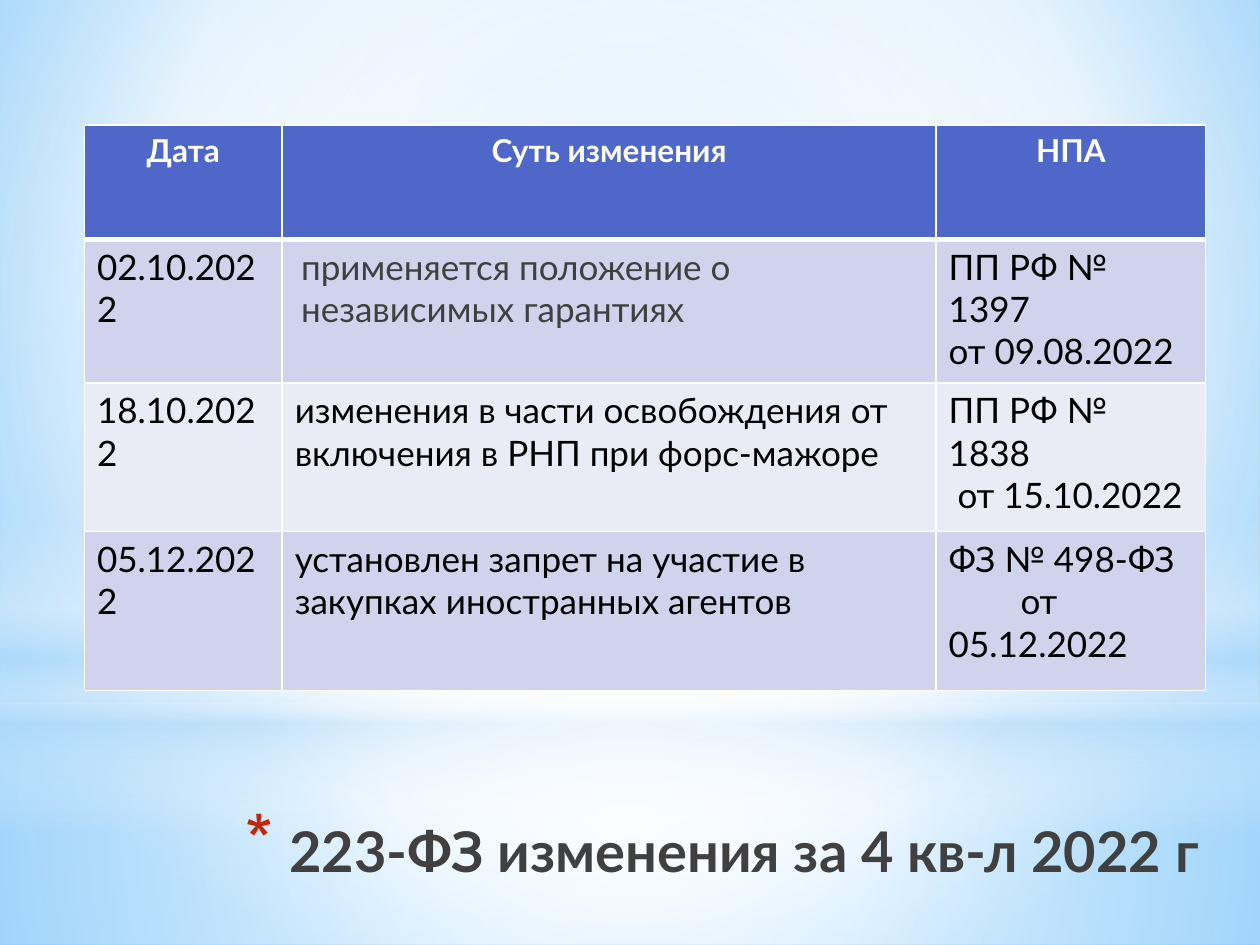
from lxml.etree import SubElement
from pptx import Presentation
from pptx.dml.color import RGBColor
from pptx.enum.shapes import MSO_SHAPE as Shape
from pptx.enum.text import MSO_ANCHOR as Anchor, PP_ALIGN as Align
from pptx.oxml import parse_xml
from pptx.oxml.ns import nsdecls, qn
from pptx.util import Inches, Pt

FONT = "Lato"
WIDTH, HEIGHT = 10, 7.5
TITLE = "223-ФЗ изменения за 4 кв-л 2022 г"
WHITE, BLACK, GREY, PALE = "FFFFFF", "000000", "404040", "B4DCFA"
HEADER_FILL, BAND_FILLS = "4E67C8", ("D0D3EB", "E9EBF5")

HEADERS = ("Дата", "Суть изменения", "НПА")
# Each cell is a list of paragraphs: text, left margin, first-line indent, colour
ROWS = (
    ([("02.10.2022", 0, 0, BLACK)],
     [("применяется положение о независимых гарантиях", 0.05, 0, GREY)],
     [("ПП РФ № 1397", 0, 0, BLACK), ("от 09.08.2022", 0, 0, BLACK)]),
    ([("18.10.2022", 0, 0, BLACK)],
     [("изменения в части освобождения от включения в РНП при форс-мажоре", 0, 0, BLACK)],
     [("ПП РФ № 1838", 0, 0, BLACK), ("от 15.10.2022", 0, 0.07, BLACK)]),
    ([("05.12.2022", 0, 0, BLACK)],
     [("установлен запрет на участие в закупках иностранных агентов", 0, 0, BLACK)],
     [("ФЗ № 498-ФЗ", 0, 0, BLACK), ("от 05.12.2022", 0, 0.57, BLACK)]),
)
COLUMN_WIDTHS = (1.57, 5.19, 2.14)
ROW_HEIGHTS = (0.91, 1.14, 1.18, 1.26)

# Gradient stops: position, colour, opacity (all in percent)
BACKGROUND_STOPS = ((0, "9ED5FF", 100), (60, WHITE, 100), (100, "5BB9FF", 100))
CENTRE = (50, 50, 50, 50)
# Shape, left, top, width, height, stops, focus (None for a vertical gradient)
GLOWS = (
    (Shape.RECTANGLE, 0, 5.58, WIDTH, 1.92,
     ((0, WHITE, 91), (37, WHITE, 76), (100, PALE, 79)), CENTRE),
    (Shape.RECTANGLE, 0, 0, WIDTH, 5.58,
     ((0, WHITE, 89), (48, WHITE, 62), (100, PALE, 79)), CENTRE),
    (Shape.RECTANGLE, 0, 4.12, WIDTH, 2.5,
     ((0, WHITE, 0), (29, WHITE, 30), (45, PALE, 40), (55, WHITE, 26),
      (65, PALE, 60), (100, WHITE, 0)), None),
    (Shape.OVAL, 0, 1.75, WIDTH, 5.58, ((0, WHITE, 100), (56, WHITE, 0)), CENTRE),
)


def rgb(value):
    return RGBColor.from_string(value)


def set_gradient(owner, fill, stops, focus):
    """Fill with a circular gradient around focus, or a vertical one without it."""
    fill.solid()
    fill.fore_color.rgb = rgb(WHITE)
    stop_xml = "".join(
        f'<a:gs pos="{position * 1000}"><a:srgbClr val="{color}">'
        f'<a:alpha val="{opacity * 1000}"/></a:srgbClr></a:gs>'
        for position, color, opacity in stops)
    if focus:
        edges = " ".join(f'{side}="{share * 1000}"' for side, share in zip("ltrb", focus))
        direction = f'<a:path path="circle"><a:fillToRect {edges}/></a:path>'
    else:
        direction = '<a:lin ang="5400000" scaled="0"/>'
    solid = owner.element.xpath(".//a:solidFill")[0]
    solid.getparent().replace(solid, parse_xml(
        f'<a:gradFill {nsdecls("a")} rotWithShape="1"><a:gsLst>{stop_xml}</a:gsLst>'
        f'{direction}</a:gradFill>'))


def set_font(paragraph, size, color, bold=False):
    font = paragraph.font
    font.name, font.size, font.bold = FONT, Pt(size), bold
    font.color.rgb = rgb(color)


def set_indent(paragraph, margin, indent):
    properties = paragraph._p.get_or_add_pPr()
    properties.set("marL", str(Inches(margin)))
    properties.set("indent", str(Inches(indent)))
    return properties


def style_cell(cell, color, bottom=1):
    cell.fill.solid()
    cell.fill.fore_color.rgb = rgb(color)
    properties = cell._tc.get_or_add_tcPr()
    for index, (side, width) in enumerate(zip("LRTB", (1, 1, 1, bottom))):
        properties.insert(index, parse_xml(
            f'<a:ln{side} {nsdecls("a")} w="{Pt(width)}"><a:solidFill>'
            f'<a:srgbClr val="{WHITE}"/></a:solidFill></a:ln{side}>'))


def add_glows(slide):
    for kind, left, top, width, height, stops, focus in GLOWS:
        shape = slide.shapes.add_shape(kind, *map(Inches, (left, top, width, height)))
        shape.shadow.inherit = False
        shape.line.fill.background()
        set_gradient(shape, shape.fill, stops, focus)


def add_title(slide):
    box = slide.shapes.add_textbox(*map(Inches, (0.91, 6.35, 8.71, 0.79)))
    frame = box.text_frame
    frame.word_wrap = True
    frame.vertical_anchor = Anchor.MIDDLE
    paragraph = frame.paragraphs[0]
    paragraph.text = TITLE
    paragraph.alignment = Align.RIGHT
    properties = set_indent(paragraph, 0.35, -0.35)
    bullet_color = SubElement(properties, qn("a:buClr"))
    SubElement(bullet_color, qn("a:srgbClr"), val="C3260C")
    SubElement(properties, qn("a:buSzPct"), val="128000")
    SubElement(properties, qn("a:buChar"), char="*")
    set_font(paragraph, 32, GREY, bold=True)


def add_changes_table(slide):
    frame = slide.shapes.add_table(
        len(ROW_HEIGHTS), len(COLUMN_WIDTHS), Inches(0.67), Inches(0.99),
        Inches(sum(COLUMN_WIDTHS)), Inches(sum(ROW_HEIGHTS)))
    table = frame.table
    for column, width in zip(table.columns, COLUMN_WIDTHS):
        column.width = Inches(width)
    for row, height in zip(table.rows, ROW_HEIGHTS):
        row.height = Inches(height)

    for column, header in enumerate(HEADERS):
        cell = table.cell(0, column)
        style_cell(cell, HEADER_FILL, bottom=3)
        cell.text = header
        paragraph = cell.text_frame.paragraphs[0]
        paragraph.alignment = Align.CENTER
        set_font(paragraph, 18, WHITE, bold=True)

    for row, contents in enumerate(ROWS, start=1):
        for column, lines in enumerate(contents):
            cell = table.cell(row, column)
            style_cell(cell, BAND_FILLS[(row - 1) % 2])
            cell.text = "\n".join(line[0] for line in lines)
            for paragraph, (_, margin, indent, color) in zip(cell.text_frame.paragraphs, lines):
                set_indent(paragraph, margin, indent)
                set_font(paragraph, 20, color)


def main():
    presentation = Presentation()
    presentation.slide_width, presentation.slide_height = Inches(WIDTH), Inches(HEIGHT)
    slide = presentation.slides.add_slide(presentation.slide_layouts[6])
    set_gradient(slide, slide.background.fill, BACKGROUND_STOPS, (20, 10, 20, 60))
    add_glows(slide)
    add_title(slide)
    add_changes_table(slide)
    presentation.save("out.pptx")


if __name__ == "__main__":
    main()
